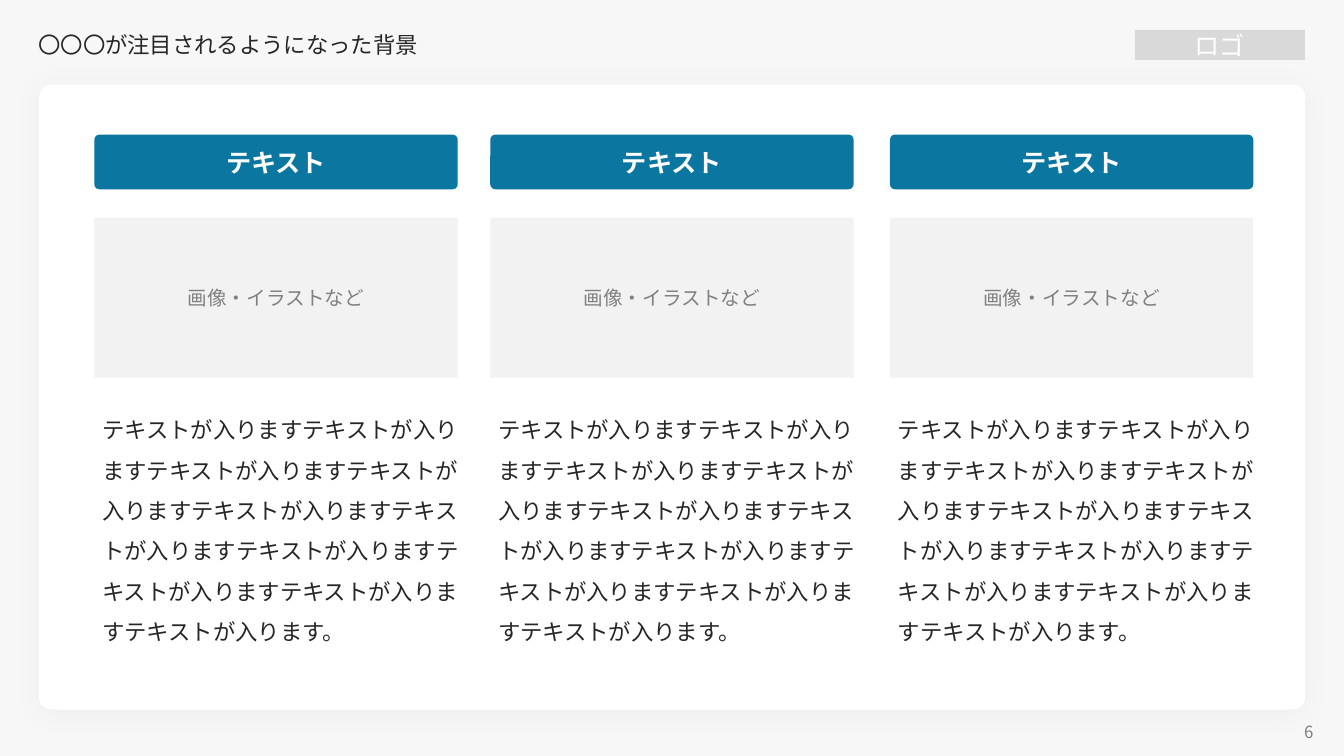
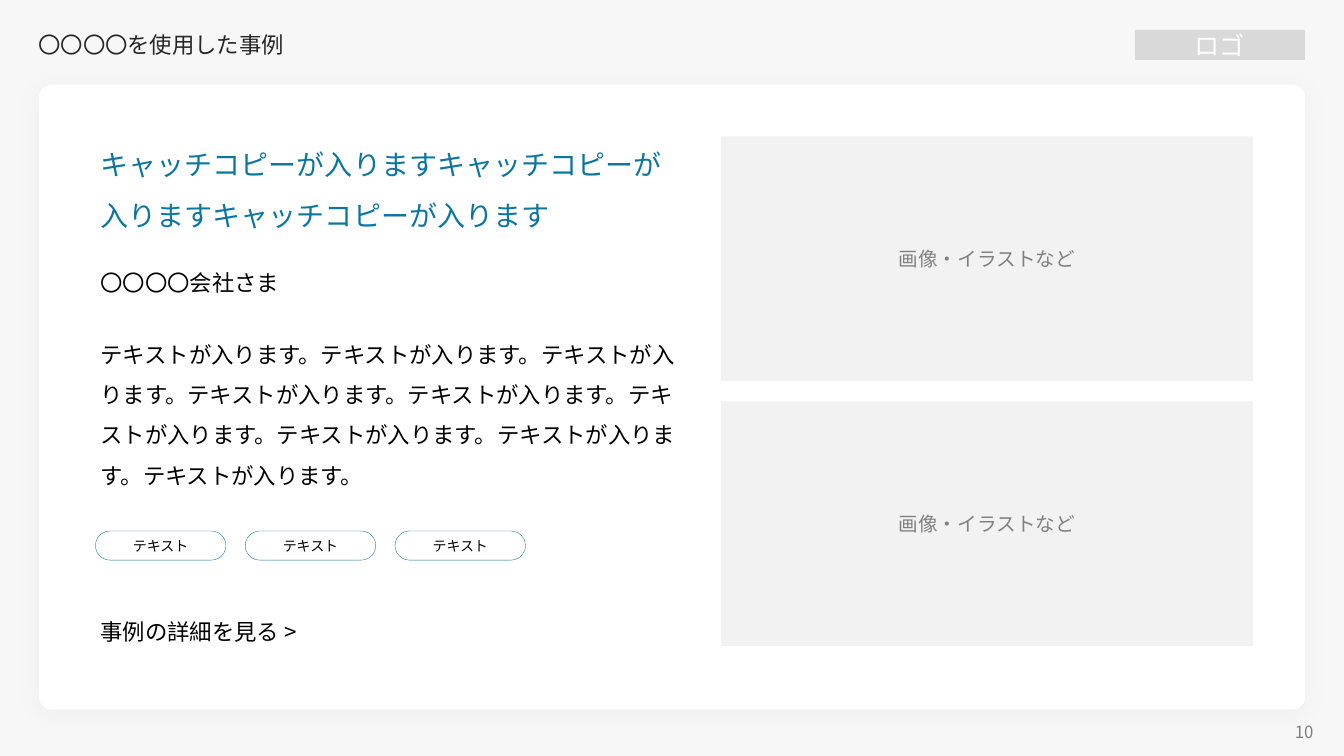
from lxml.etree import SubElement
from pptx import Presentation
from pptx.dml.color import RGBColor
from pptx.enum.shapes import MSO_SHAPE
from pptx.enum.text import MSO_ANCHOR, MSO_AUTO_SIZE, PP_ALIGN
from pptx.oxml.ns import qn
from pptx.util import Pt

COLORS = {
    "background": "F7F7F7",
    "white": "FFFFFF",
    "accent": "0B76A0",
    "picture": "F2F2F2",
    "logo": "D9D9D9",
    "muted": "808080",
    "text": "262626",
    "black": "000000",
}
FONT = "Noto Sans CJK JP"
PICTURE_FONT = "Karla"


class Deck:
    """Holds the shared style and the current slide."""

    def __init__(self):
        self.presentation = Presentation()
        self.presentation.slide_width = Pt(960)
        self.presentation.slide_height = Pt(540)
        self.fill(self.presentation.slide_master.background.fill, "background")
        self.slide = None

    def fill(self, fill, color):
        fill.solid()
        fill.fore_color.rgb = RGBColor.from_string(COLORS[color])

    def set_text(self, shape, text, size, color, align=PP_ALIGN.LEFT, spacing=1.0,
                 anchor=MSO_ANCHOR.MIDDLE, bold=False, font=FONT):
        frame = shape.text_frame
        frame.word_wrap = True
        frame.auto_size = MSO_AUTO_SIZE.NONE
        frame.vertical_anchor = anchor
        paragraph = frame.paragraphs[0]
        paragraph.alignment = align
        paragraph.line_spacing = spacing
        run = paragraph.add_run()
        run.text = text
        run.font.size = Pt(size)
        run.font.bold = bold
        run.font.color.rgb = RGBColor.from_string(COLORS[color])
        run.font.name = font
        # Japanese characters take the East Asian typeface
        SubElement(run.font._element, qn("a:ea"), typeface=font)

    def box(self, left, top, width, height, color, radius=None, line=None):
        kind = MSO_SHAPE.RECTANGLE if radius is None else MSO_SHAPE.ROUNDED_RECTANGLE
        shape = self.slide.shapes.add_shape(
            kind, Pt(left), Pt(top), Pt(width), Pt(height))
        shape.shadow.inherit = False
        if radius is not None:
            shape.adjustments[0] = radius
        self.fill(shape.fill, color)
        if line:
            self.fill(shape.line.fill, line)
            shape.line.width = Pt(0.25)
        else:
            shape.line.fill.background()
        return shape

    def text(self, left, top, width, height, text, size=16, color="black",
             anchor=MSO_ANCHOR.TOP, **style):
        shape = self.slide.shapes.add_textbox(
            Pt(left), Pt(top), Pt(width), Pt(height))
        self.set_text(shape, text, size, color, anchor=anchor, **style)

    def card(self):
        shape = self.box(28, 60.5, 904.3, 446.4, "white", radius=0.02)
        effects = shape._element.spPr.find(qn("a:effectLst"))
        shadow = SubElement(effects, qn("a:outerShdw"), blurRad=str(Pt(20)),
                            dist=str(Pt(3)), dir="5400000", algn="t", rotWithShape="0")
        color = SubElement(shadow, qn("a:srgbClr"), val=COLORS["black"])
        SubElement(color, qn("a:alpha"), val="3000")

    def new_slide(self, title, number):
        self.slide = self.presentation.slides.add_slide(
            self.presentation.slide_layouts[5])
        # Title
        heading = self.slide.shapes.title
        heading.left, heading.top = Pt(20.2), Pt(18)
        heading.width, heading.height = Pt(720), Pt(29.5)
        self.set_text(heading, title, 16, "text", spacing=0.9)
        # Card, page number and logo space
        self.card()
        self.text(721.4, 514, 224, 17.3, number, 12, "muted",
                  align=PP_ALIGN.RIGHT, anchor=MSO_ANCHOR.MIDDLE)
        logo = self.box(810.7, 21.4, 121.3, 21.4, "logo")
        self.set_text(logo, "ロゴ", 18, "white", PP_ALIGN.CENTER)

    def picture_space(self, left, top, width, height):
        shape = self.box(left, top, width, height, "picture")
        self.set_text(shape, "画像・イラストなど", 14, "muted", PP_ALIGN.CENTER,
                      font=PICTURE_FONT)

    def header(self, left, top, width, height, text):
        shape = self.box(left, top, width, height, "accent", radius=0.09)
        self.set_text(shape, text, 18, "white", PP_ALIGN.CENTER, bold=True)

    def tag(self, left, top, width, height, text):
        shape = self.box(left, top, width, height, "white", radius=0.5, line="accent")
        self.set_text(shape, text, 10, "black", PP_ALIGN.CENTER)


def background_slide(deck):
    deck.new_slide("〇〇〇が注目されるようになった背景", "6")
    # Three columns: header, picture space, body
    column_width = 259.5
    for left in (67.4, 350.2, 635.7):
        deck.header(left, 96.2, column_width, 39, "テキスト")
        deck.picture_space(left, 155.4, column_width, 114.4)
        deck.text(left - 1.5, 284.4, 272.2, 178, "テキストが入ります" * 10 + "。",
                  color="text", spacing=1.5)


def case_slide(deck):
    deck.new_slide("〇〇〇〇を使用した事例", "10")
    left, width = 64.8, 426.2
    # Catch copy, customer and description
    deck.text(left, 90, width, 78, "キャッチコピーが入ります" * 3, 20, "accent",
              spacing=1.5)
    deck.text(left, 188.6, width, 26.6, "〇〇〇〇会社さま")
    deck.text(left, 230.4, width, 120, "テキストが入ります。" * 9, spacing=1.5)
    # Tags
    for index in range(3):
        deck.tag(68.2 + 107 * index, 379.3, 93.2, 20.8, "テキスト")
    # Link line
    deck.text(left, 428.4, width, 32.4, "事例の詳細を見る >", spacing=1.5)
    # Picture spaces
    for top in (97.4, 286.6):
        deck.picture_space(514.9, top, 380.2, 174.8)


def main():
    deck = Deck()
    background_slide(deck)
    case_slide(deck)
    deck.presentation.save("out.pptx")


if __name__ == "__main__":
    main()
